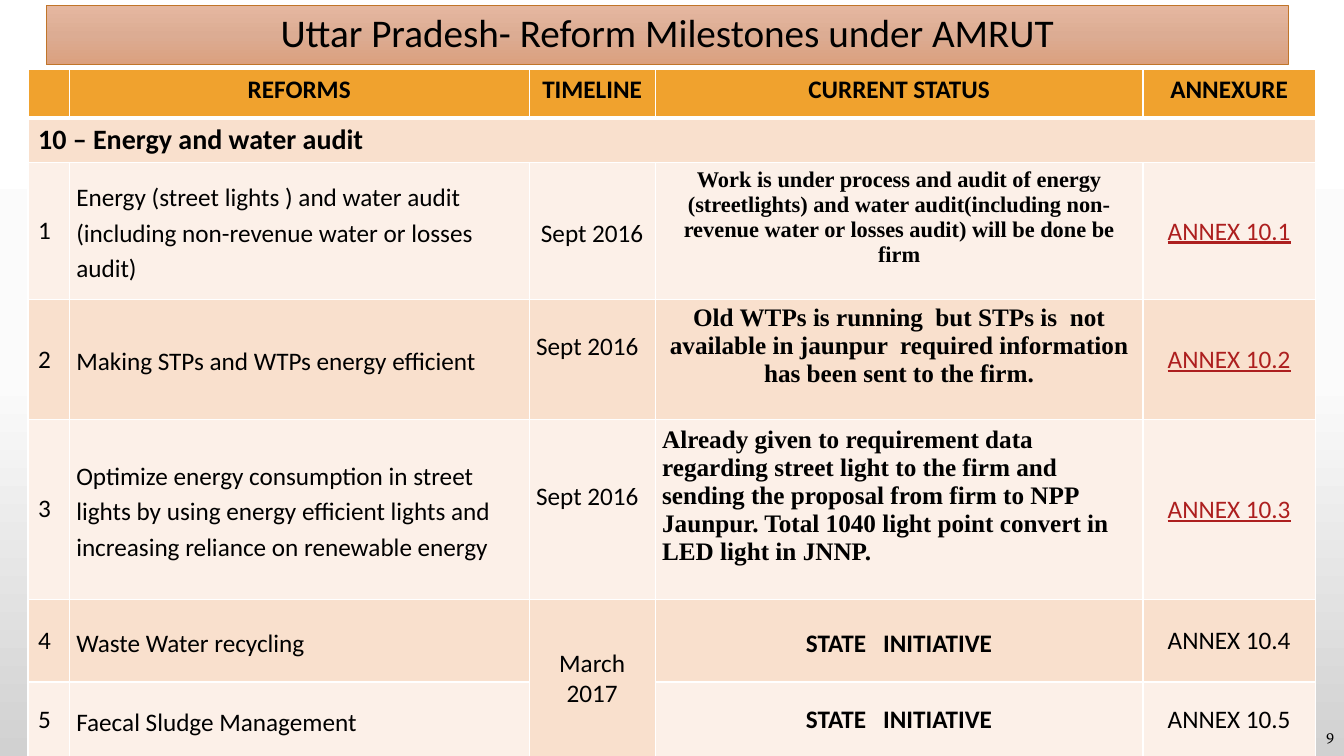
from lxml import etree
from pptx import Presentation
from pptx.dml.color import RGBColor
from pptx.enum import shapes, text
from pptx.oxml import ns
from pptx.util import Pt

BLACK, WHITE, LINK = "000000", "FFFFFF", "AD1F1F"
HEADER, DARK, LIGHT = "F0A22E", "F9E0CD", "FCF0E8"
SERIF = "Times New Roman"
LEFT, CENTER, RIGHT, JUSTIFY = (
    text.PP_ALIGN.LEFT, text.PP_ALIGN.CENTER, text.PP_ALIGN.RIGHT, text.PP_ALIGN.JUSTIFY)

COLUMNS = [29.5, 328.5, 90, 348.5, 123]
ROWS = [34.6, 31.7, 98, 82.8, 122.4, 59, 54]
HEADINGS = ["", "REFORMS", "TIMELINE", "CURRENT STATUS", "ANNEXURE"]
SECTION = "10 – Energy and water audit"

BOLD_SERIF = {"name": SERIF, "bold": True, "align": CENTER, "lift": 20}
STATE = {"bold": True, "align": CENTER}
LINKED = {"color": LINK, "underline": True}
# reform, reform format, timeline, timeline format, status, status format, annexure format
REFORMS = [
    ("Energy (street lights ) and water audit (including non-revenue water or losses audit)", {},
     "Sept 2016", {"align": CENTER, "spacing": 1.15},
     "Work is under process and audit of energy (streetlights) and water audit(including "
     "non-revenue water or losses audit) will be done be firm", BOLD_SERIF | {"size": 16}, LINKED),
    ("Making STPs and WTPs energy efficient", {},
     "Sept 2016", {"spacing": 1.15, "lift": 22},
     "Old WTPs is running  but STPs is  not available in jaunpur  required information "
     "has been sent to the firm.", BOLD_SERIF, LINKED),
    ("Optimize energy consumption in street lights by using energy efficient lights and "
     "increasing reliance on renewable energy", {},
     "Sept 2016", {"spacing": 1.15, "lift": 22},
     "Already given to requirement data regarding street light to the firm and sending the "
     "proposal from firm to NPP Jaunpur. Total 1040 light point convert in LED light in JNNP.",
     BOLD_SERIF | {"align": LEFT}, LINKED),
    ("Waste Water recycling", {"align": JUSTIFY}, "March 2017", {"align": CENTER},
     "STATE   INITIATIVE", STATE | {"spacing": 1.15}, {}),
    ("Faecal Sludge Management", {"align": JUSTIFY}, "", {},
     "STATE   INITIATIVE", STATE, {}),
]


def rgb(value):
    return RGBColor.from_string(value)


def write(frame, words, color=BLACK, align=LEFT, spacing=None, **font):
    paragraph = frame.paragraphs[0]
    paragraph.alignment = align
    if spacing:
        paragraph.line_spacing = spacing
    run = paragraph.add_run()
    run.text = words
    run.font.color.rgb = rgb(color)
    settings = {"name": "Calibri", "size": 18, "bold": False} | font
    settings["size"] = Pt(settings["size"])
    for key, value in settings.items():
        setattr(run.font, key, value)


def fill_gradient(fill, element, colors):
    """Fill top to bottom with evenly spaced colours."""
    fill.gradient()
    fill.gradient_angle = 270
    stops = next(element.iter(ns.qn("a:gsLst")))
    for stop in list(stops):
        stops.remove(stop)
    for index, color in enumerate(colors):
        position = str(100000 * index // (len(colors) - 1))
        stop = etree.SubElement(stops, ns.qn("a:gs"), pos=position)
        etree.SubElement(stop, ns.qn("a:srgbClr"), val=color)


def set_borders(cell, top=1, bottom=1):
    properties = cell._tc.get_or_add_tcPr()
    widths = {"lnL": 1, "lnR": 1, "lnT": top, "lnB": bottom}
    for index, (side, width) in enumerate(widths.items()):
        line = etree.Element(ns.qn(f"a:{side}"), w=str(Pt(width)))
        solid = etree.SubElement(line, ns.qn("a:solidFill"))
        etree.SubElement(solid, ns.qn("a:srgbClr"), val=WHITE)
        properties.insert(index, line)


def fill_cell(cell, words, tight=True, lift=0, **style):
    """Write in the middle of a cell; lift keeps room free below the text."""
    cell.vertical_anchor = text.MSO_ANCHOR.MIDDLE
    if tight:
        margins = {"left": 5, "right": 5, "top": 0.7, "bottom": lift}
        for side, value in margins.items():
            setattr(cell, f"margin_{side}", Pt(value))
    if words:
        write(cell.text_frame, words, **style)


def add_title(slide, left, top, width, height):
    shape = slide.shapes.add_shape(
        shapes.MSO_SHAPE.RECTANGLE, Pt(left), Pt(top), Pt(width), Pt(height))
    shape.shadow.inherit = False
    fill_gradient(shape.fill, shape.element, ["E5B7A0", "DCAC93", "DBA07E"])
    shape.line.color.rgb = rgb("C17529")
    shape.line.width = Pt(0.5)
    shape.text_frame.word_wrap = True
    shape.text_frame.vertical_anchor = text.MSO_ANCHOR.MIDDLE
    write(shape.text_frame, "Uttar Pradesh- Reform Milestones under AMRUT",
          size=28, align=CENTER, spacing=0.9)


def add_reform_table(slide, left, top):
    table = slide.shapes.add_table(
        len(ROWS), len(COLUMNS), Pt(left), Pt(top), Pt(sum(COLUMNS)), Pt(sum(ROWS))).table
    table.first_row = table.horz_banding = False
    for column, width in zip(table.columns, COLUMNS):
        column.width = Pt(width)
    for index, (row, height) in enumerate(zip(table.rows, ROWS)):
        row.height = Pt(height)
        for cell in row.cells:
            cell.fill.solid()
            cell.fill.fore_color.rgb = rgb(HEADER if index == 0 else DARK if index % 2 else LIGHT)
            set_borders(cell, top=3 if index == 1 else 1, bottom=3 if index == 0 else 1)

    for cell, heading in zip(table.rows[0].cells, HEADINGS):
        if heading:
            write(cell.text_frame, heading, bold=True, align=CENTER)
    table.cell(1, 0).merge(table.cell(1, len(COLUMNS) - 1))
    fill_cell(table.cell(1, 0), SECTION, tight=False, size=20, bold=True)
    table.cell(5, 2).merge(table.cell(6, 2))

    for number, reform in enumerate(REFORMS, 1):
        name, name_style, date, date_style, status, status_style, annex_style = reform
        cells = table.rows[number + 1].cells
        fill_cell(cells[0], str(number), tight=False)
        fill_cell(cells[1], name, spacing=1.15, **name_style)
        fill_cell(cells[2], date, **date_style)
        fill_cell(cells[3], status, **status_style)
        fill_cell(cells[4], f"ANNEX 10.{number}", align=CENTER, **annex_style)


def add_page_number(slide, left, top, width, height):
    frame = slide.shapes.add_textbox(Pt(left), Pt(top), Pt(width), Pt(height)).text_frame
    frame.word_wrap = True
    frame.vertical_anchor = text.MSO_ANCHOR.MIDDLE
    write(frame, "9", name="Vollkorn", size=11, align=RIGHT)


def main():
    presentation = Presentation()
    presentation.slide_width, presentation.slide_height = Pt(960), Pt(540)
    slide = presentation.slides.add_slide(presentation.slide_layouts[6])
    fill_gradient(slide.background.fill, slide.element, ["FFFFFF", "FBFBFB", "D1D1D1"])
    add_page_number(slide, 898.5, 510.5, 61.5, 29)
    add_reform_table(slide, 20, 49.7)
    add_title(slide, 33, 4.2, 887, 42)
    presentation.save("out.pptx")


if __name__ == "__main__":
    main()
